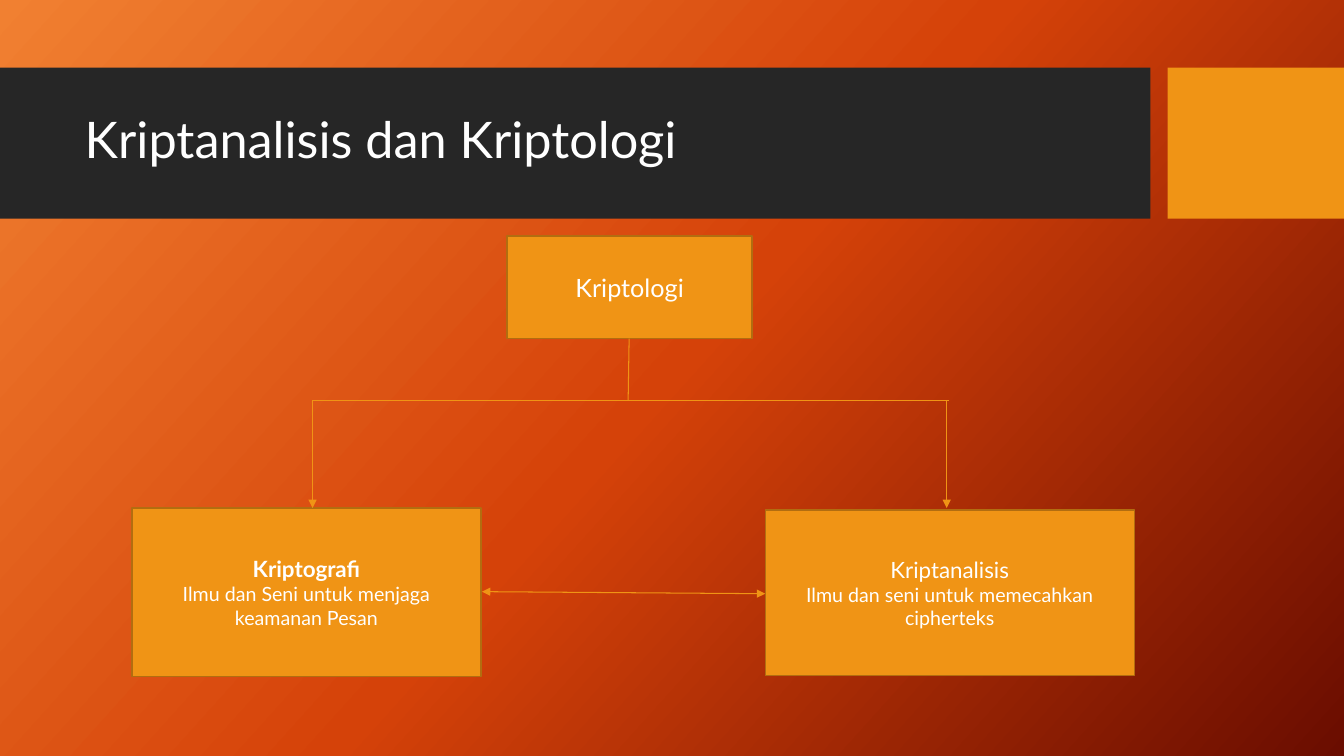
from copy import deepcopy

from lxml import etree
from pptx import Presentation
from pptx import util as u
from pptx.dml.color import RGBColor
from pptx.enum import shapes, text
from pptx.oxml.ns import qn

AMBER = RGBColor(0xF0, 0x94, 0x15)
BROWN = RGBColor(0xB2, 0x6D, 0x10)
CHARCOAL = RGBColor(0x26, 0x26, 0x26)
WHITE = RGBColor(0xFF, 0xFF, 0xFF)
GRADIENT = [
    (0, RGBColor(0xF1, 0x80, 0x31)),
    (0.5, RGBColor(0xD5, 0x42, 0x09)),
    (1, RGBColor(0x6A, 0x0D, 0x00)),
]


def set_background(s):
    fill = s.background.fill
    fill.gradient()
    fill.gradient_angle = 360 - 42
    first = fill._fill._gradFill.find(qn("a:gsLst"))[0]
    first.addnext(deepcopy(first))
    for stop, (position, color) in zip(fill.gradient_stops, GRADIENT):
        stop.position = position
        stop.color.rgb = color


def add_run(p, words, size, bold=False):
    r = p.add_run()
    r.text = words
    formats = {"name": "Lato", "size": u.Pt(size), "bold": bold}
    for key, value in formats.items():
        setattr(r.font, key, value)
    r.font.color.rgb = WHITE


def add_rect(s, box, color, border=None):
    sp = s.shapes.add_shape(shapes.MSO_SHAPE.RECTANGLE, *map(u.Inches, box))
    sp.shadow.inherit = False
    sp.fill.solid()
    sp.fill.fore_color.rgb = color
    if border is None:
        sp.line.fill.background()
    else:
        sp.line.color.rgb = border
        sp.line.width = u.Pt(1)
    return sp


def add_node(s, box, lines):
    tf = add_rect(s, box, AMBER, BROWN).text_frame
    tf.word_wrap = True
    tf.vertical_anchor = text.MSO_ANCHOR.MIDDLE
    for i, line in enumerate(lines):
        p = tf.add_paragraph() if i else tf.paragraphs[0]
        p.alignment = text.PP_ALIGN.CENTER
        add_run(p, *line)


def add_line(s, points, ends=()):
    cx = s.shapes.add_connector(
        shapes.MSO_CONNECTOR.STRAIGHT, *map(u.Inches, points))
    cx.line.color.rgb = AMBER
    cx.line.width = u.Pt(0.75)
    ln = cx.line._get_or_add_ln()
    for end in ends:
        etree.SubElement(ln, qn(end), type="triangle")
    etree.SubElement(cx._element.spPr, qn("a:effectLst"))


def set_title(s, words):
    title = s.shapes.title
    box = {"left": 0.74, "top": 0.82, "width": 10.51, "height": 1.18}
    for key, value in box.items():
        setattr(title, key, u.Inches(value))
    tf = title.text_frame
    tf.word_wrap = True
    tf.vertical_anchor = text.MSO_ANCHOR.MIDDLE
    p = tf.paragraphs[0]
    p.alignment = text.PP_ALIGN.LEFT
    p.line_spacing = 0.9
    add_run(p, words, 36)
    s.shapes._spTree.append(title._element)


def main():
    prs = Presentation()
    prs.slide_width = u.Inches(13.33)
    prs.slide_height = u.Inches(7.5)
    s = prs.slides.add_slide(prs.slide_layouts[5])
    set_background(s)

    add_rect(s, (0, 0.67, 11.41, 1.5), CHARCOAL)
    add_rect(s, (11.58, 0.67, 1.75, 1.5), AMBER)
    set_title(s, "Kriptanalisis dan Kriptologi")

    add_node(s, (5.03, 2.34, 2.43, 1.02), [("Kriptologi", 18)])
    add_node(s, (1.31, 5.04, 3.46, 1.67), [
        ("Kriptografi", 16, True),
        ("Ilmu dan Seni untuk menjaga keamanan Pesan", 14),
    ])
    add_node(s, (7.59, 5.06, 3.66, 1.64), [
        ("Kriptanalisis", 16),
        ("Ilmu dan seni untuk memecahkan cipherteks", 14),
    ])

    add_line(s, (6.24, 3.36, 6.23, 3.97))
    add_line(s, (3.1, 3.97, 9.41, 3.97))
    for x in (3.1, 9.39):
        add_line(s, (x, 3.97, x, 5.04), ["a:tailEnd"])
    add_line(s, (4.78, 5.87, 7.59, 5.89), ["a:headEnd", "a:tailEnd"])

    prs.save("out.pptx")


if __name__ == "__main__":
    main()
